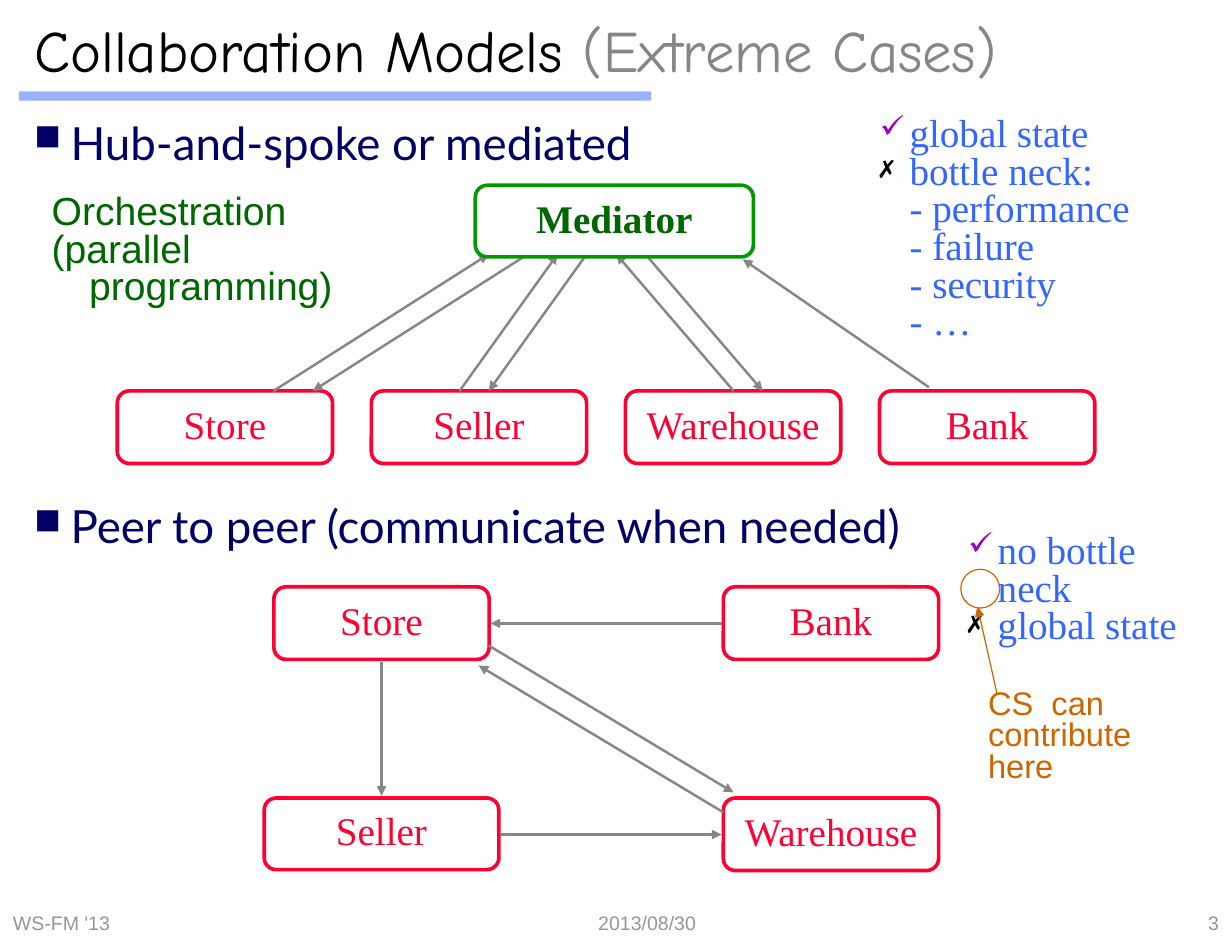
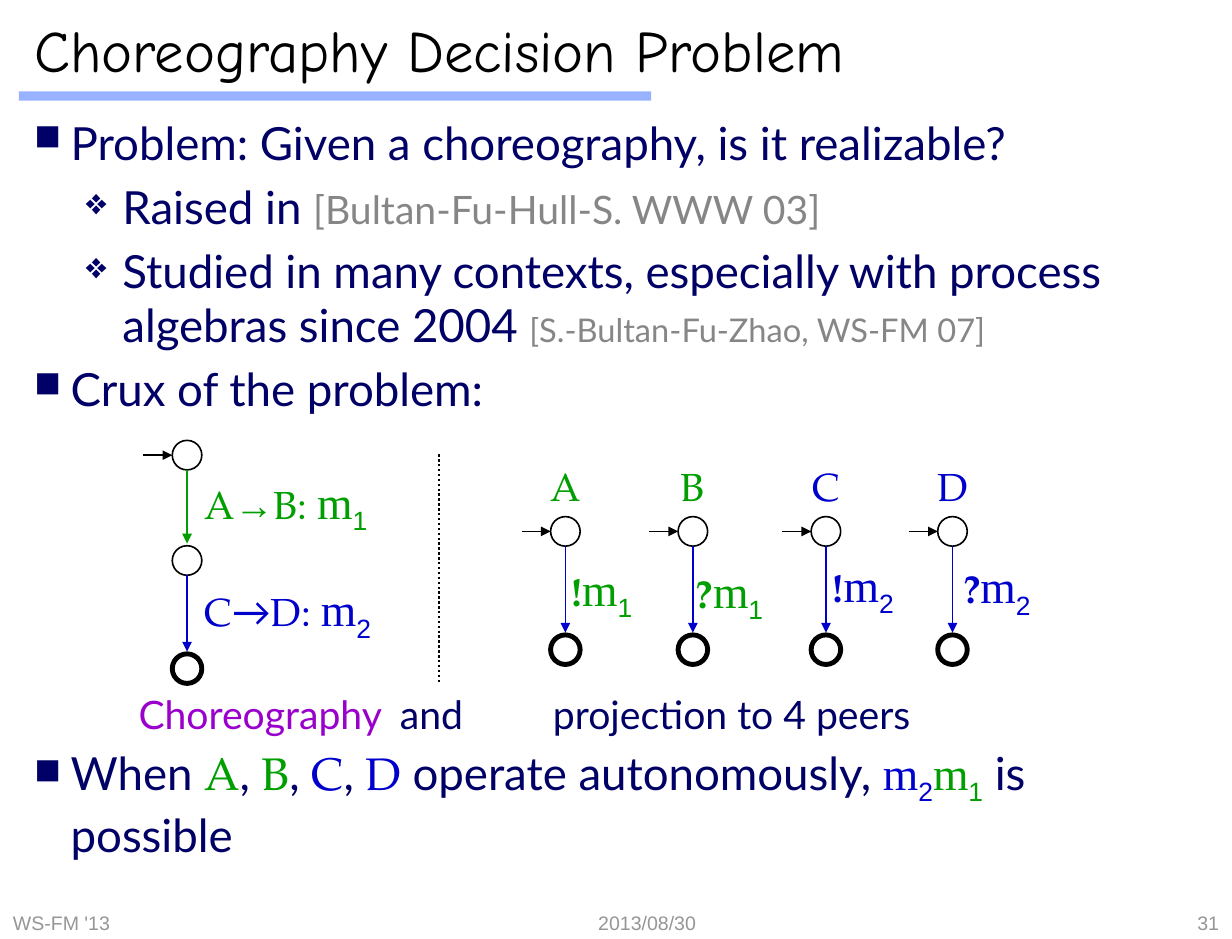
from lxml.etree import SubElement
from pptx import Presentation
from pptx.dml.color import RGBColor
from pptx.enum.dml import MSO_LINE
from pptx.enum.shapes import MSO_CONNECTOR, MSO_SHAPE
from pptx.enum.text import MSO_ANCHOR, MSO_AUTO_SIZE, PP_ALIGN
from pptx.oxml.ns import qn
from pptx.util import Cm, Pt

BLACK, WHITE, NAVY, GRAY = "000000", "FFFFFF", "000066", "868686"
BLUE, RED, PURPLE, ORANGE = "3366FF", "FF0033", "9900CC", "CC6600"
DARK_GREEN, GREEN, MID_BLUE = "006600", "009E00", "0000CC"
HEAD, BODY, SERIF, SANS, MATH = "Comic Neue", "Lato", "Times New Roman", "Arial", "TeX Gyre Pagella"
STATE = 0.64


def rgb(value):
    return RGBColor.from_string(value)


def add_text(p, text, size=24, font=BODY, color=NAVY, bold=False, base=0):
    for i, part in enumerate(text.split("\n")):
        if i:
            p.add_line_break()
        r = p.add_run()
        r.text = part
        r.font.size = Pt(size)
        r.font.name = font
        r.font.bold = bold
        r.font.color.rgb = rgb(color)
        if base:
            r._r.get_or_add_rPr().set("baseline", str(base * 1000))


def add_bullet(p, char, color):
    pPr = p._p.get_or_add_pPr()
    SubElement(SubElement(pPr, qn("a:buClr")), qn("a:srgbClr"), val=color)
    SubElement(pPr, qn("a:buSzPct"), val="80000")
    SubElement(pPr, qn("a:buChar"), char=char)


def add_tabs(p, stops):
    tabs = SubElement(p._p.get_or_add_pPr(), qn("a:tabLst"))
    for stop in stops:
        SubElement(tabs, qn("a:tab"), pos=str(Cm(stop)), algn="l")


def peer(name, color):
    return name, dict(font=MATH, color=color)


def message(number, color):
    return [("m", dict(size=28, font=SERIF, color=color)),
            (number, dict(size=28, font=SANS, color=color, base=-25))]


class Deck:
    def __init__(self):
        self.prs = Presentation()
        self.prs.slide_width, self.prs.slide_height = Cm(26.67), Cm(20.32)
        self.s = None

    def slide(self, number, *title):
        self.s = self.prs.slides.add_slide(self.prs.slide_layouts[5])
        self.band()
        footer = dict(size=12, font=SANS, color="969696")
        for x, w, text, align in ((11.23, 5.56, "2013/08/30", PP_ALIGN.CENTER),
                                  (0, 8.46, "WS-FM '13", PP_ALIGN.LEFT),
                                  (21.11, 5.56, number, PP_ALIGN.RIGHT)):
            self.text(x, 19.63, w, 0.69, [text], align=align, anchor=MSO_ANCHOR.MIDDLE, **footer)
        sp = self.s.shapes.title
        sp.left, sp.top, sp.width, sp.height = Cm(0.46), Cm(0), Cm(25.78), Cm(2.11)
        self.frame(sp, MSO_ANCHOR.MIDDLE)
        p = sp.text_frame.paragraphs[0]
        p.alignment = PP_ALIGN.LEFT
        for text, color in zip(title, (BLACK, GRAY)):
            add_text(p, text, size=36, font=HEAD, color=color)

    def frame(self, sp, anchor=MSO_ANCHOR.TOP, inset=0.28, wrap=True):
        tf = sp.text_frame
        tf.auto_size = MSO_AUTO_SIZE.NONE
        tf.word_wrap = wrap
        tf.vertical_anchor = anchor
        tf.margin_left = tf.margin_right = Cm(inset)
        tf.margin_top = tf.margin_bottom = Cm(inset / 2)
        return tf

    def band(self):
        sp = self.shape(MSO_SHAPE.RECTANGLE, 0.41, 1.98, 13.69, 0.2, fill=BLUE)
        color = sp.fill._xPr.find(qn("a:solidFill")).find(qn("a:srgbClr"))
        SubElement(color, qn("a:alpha"), val="50000")

    def shape(self, kind, x, y, w, h, fill=None, line=None, width=1):
        sp = self.s.shapes.add_shape(kind, Cm(x), Cm(y), Cm(w), Cm(h))
        sp.shadow.inherit = False
        if fill:
            sp.fill.solid()
            sp.fill.fore_color.rgb = rgb(fill)
        else:
            sp.fill.background()
        if line:
            sp.line.color.rgb = rgb(line)
            sp.line.width = Pt(width)
        else:
            sp.line.fill.background()
        return sp

    def node(self, name, x, y, w=4.66, h=1.57, line=RED, color=RED, fill=None, bold=False):
        sp = self.shape(MSO_SHAPE.ROUNDED_RECTANGLE, x, y, w, h, fill, line, 2.25)
        p = self.frame(sp, MSO_ANCHOR.MIDDLE, wrap=False).paragraphs[0]
        p.alignment = PP_ALIGN.CENTER
        p.line_spacing = 0.85
        add_text(p, name, font=SERIF, color=color, bold=bold)

    def line(self, x1, y1, x2, y2, color=GRAY, width=1.5, arrow=True, dash=None):
        c = self.s.shapes.add_connector(MSO_CONNECTOR.STRAIGHT, Cm(x1), Cm(y1), Cm(x2), Cm(y2))
        c.line.color.rgb = rgb(color)
        c.line.width = Pt(width)
        if dash:
            c.line.dash_style = dash
        spPr = c._element.spPr
        if arrow:
            SubElement(spPr.find(qn("a:ln")), qn("a:tailEnd"), type="triangle")
        SubElement(spPr, qn("a:effectLst"))

    def text(self, x, y, w, h, paras, align=PP_ALIGN.LEFT, anchor=MSO_ANCHOR.TOP, inset=0.28,
             spacing=None, before=0, hang=0, margins=(), bullets=(), tabs=(), **fmt):
        sp = self.s.shapes.add_textbox(Cm(x), Cm(y), Cm(w), Cm(h))
        tf = self.frame(sp, anchor, inset)
        for i, runs in enumerate(paras):
            p = tf.paragraphs[0] if i == 0 else tf.add_paragraph()
            p.alignment = align
            if spacing:
                p.line_spacing = spacing
            if before:
                p.space_before = Pt(before)
            if hang:
                pPr = p._p.get_or_add_pPr()
                pPr.set("marL", str(Cm(margins[i] if margins else hang)))
                pPr.set("indent", str(-Cm(hang)))
            if bullets:
                add_bullet(p, *bullets[i])
            if tabs:
                add_tabs(p, tabs)
            for text, own in [(runs, {})] if isinstance(runs, str) else runs:
                add_text(p, text, **{**fmt, **own})

    def points(self, y, h, *items):
        levels = [level for level, _ in items]
        self.text(0.46, y, 25.78, h, [runs for _, runs in items], before=5.6, hang=0.79,
                  margins=[(0.79, 1.91)[n] for n in levels],
                  bullets=[("■❖"[n], NAVY) for n in levels], size=28)

    def verdict(self, x, y, w, h, pro, con):
        self.text(x, y, w, h, [pro, con], spacing=0.8, hang=0.64,
                  bullets=[("✓", PURPLE), ("✗", BLACK)], font=SERIF, color=BLUE)

    def automaton(self, x, tops, colors):
        self.line(x - 0.95, tops[0] + STATE / 2, x - STATE / 2, tops[0] + STATE / 2, BLACK, 1)
        for top in tops:
            width = 3 if top == tops[-1] else 1
            self.shape(MSO_SHAPE.OVAL, x - STATE / 2, top, STATE, STATE, line=BLACK, width=width)
        for top, below, color in zip(tops, tops[1:], colors):
            self.line(x, top + STATE, x, below - 0.05, color, 1)


def collaboration_models(d):
    d.slide("3", "Collaboration Models ", "(Extreme Cases)")
    d.points(2.34, 1.6, (0, "Hub-and-spoke or mediated"))
    d.points(10.64, 1.6, (0, "Peer to peer (communicate when needed)"))

    row, hub = 8.46, 5.5
    for i, name in enumerate(("Store", "Seller", "Warehouse", "Bank")):
        d.node(name, 2.54 + 5.5 * i, row)
    for x1, x2 in ((5.92, 10.58), (9.95, 12.07), (15.88, 13.34)):
        d.line(x1, row, x2, hub)
    for x1, x2 in ((11.43, 6.77), (12.7, 10.58), (13.97, 16.51)):
        d.line(x1, hub, x2, row)
    d.line(20.11, 8.38, 16.08, 5.61)
    d.node("Mediator", 10.29, 4.01, 6.02, 1.55, line="009900", color=DARK_GREEN, fill=WHITE, bold=True)
    d.text(0.84, 4.09, 7, 2.72, ["Orchestration", "(parallel\nprogramming)"],
           spacing=0.8, hang=0.81, font=SANS, color=DARK_GREEN)
    d.verdict(18.77, 2.41, 6.6, 5.21, "global state",
              "bottle neck:\n- performance\n- failure\n- security\n- …")

    d.node("Store", 5.93, 12.7)
    d.node("Bank", 15.66, 12.7)
    d.node("Seller", 5.72, 17.27, 5.08, 1.55)
    d.node("Warehouse", 15.66, 17.27)
    for ends in ((15.66, 17.58, 10.36, 14.4), (10.58, 13.97, 15.88, 17.15),
                 (15.62, 13.49, 10.62, 13.49), (10.82, 18.06, 15.62, 18.06),
                 (8.26, 14.33, 8.26, 17.22)):
        d.line(*ends)
    d.verdict(20.68, 11.43, 5.99, 2.72, "no bottle\nneck", "global state")
    d.text(21.39, 14.94, 4.7, 1.95, ["CS  can\ncontribute\nhere"], inset=0,
           spacing=0.8, size=20, font=SANS, color=ORANGE)
    d.line(21.59, 15.04, 21.16, 13.13, ORANGE, 0.75)
    d.shape(MSO_SHAPE.OVAL, 20.8, 12.32, 0.84, 0.84, line=ORANGE, width=0.75)


def decision_problem(d):
    d.slide("31", "Choreography Decision Problem")
    d.points(2.34, 7,
             (0, "Problem: Given a choreography, is it realizable?"),
             (1, [("Raised in ", {}), ("[Bultan-Fu-Hull-S. WWW 03]", dict(size=24, color=GRAY))]),
             (1, [("Studied in many contexts, especially with process algebras since 2004 ", {}),
                  ("[S.-Bultan-Fu-Zhao, WS-FM 07]", dict(size=20, color=GRAY))]),
             (0, "Crux of the problem:"))
    peers = (("A", GREEN), ("B", GREEN), ("C", MID_BLUE), ("D", MID_BLUE))
    when = [("When ", {})]
    for i, (name, color) in enumerate(peers):
        if i:
            when.append((", ", {}))
        when.append((name, dict(font=MATH, color=color)))
    d.points(15.98, 1.6, (0, when + [(" operate autonomously, ", {})] + message("2", MID_BLUE)
                          + message("1", GREEN) + [(" is possible", {})]))

    d.automaton(4.05, (9.53, 11.81, 14.15), (GREEN, MID_BLUE))
    for y, sender, receiver, number, color, arrow_font in (
            (10.13, "A", "B: ", "1", GREEN, SANS), (12.45, "C", "D: ", "2", MID_BLUE, BODY)):
        arrow = ("→", dict(font=arrow_font, color=color))
        d.text(4.17, y, 4.67, 1.45, [[peer(sender, color), arrow, peer(receiver, color)]
                                     + message(number, color)], inset=0.25)
    d.line(9.5, 9.83, 9.5, 14.81, BLACK, arrow=False, dash=MSO_LINE.ROUND_DOT)

    columns = ((12.24, "!", "1", 12.09, 11.99), (15, "?", "1", 14.78, 12.04),
               (17.88, "!", "2", 17.75, 11.91), (20.62, "?", "2", 20.57, 11.94))
    for (name, color), (x, action, number, left, top) in zip(peers, columns):
        d.text(x - 0.8, 9.86, 1.6, 1.27, [[peer(name, color)]], align=PP_ALIGN.CENTER)
        d.automaton(x, (11.18, 13.74), (MID_BLUE,))
        d.text(left, top, 2.3, 1.45,
               [[(action, dict(font=MATH, color=color, bold=True))] + message(number, color)])
    d.text(2.72, 14.81, 17.81, 1.27,
           [[("Choreography\t", dict(color=PURPLE)), ("and\tprojection to 4 peers", {})]],
           tabs=(5.66, 8.97))


def main():
    d = Deck()
    collaboration_models(d)
    decision_problem(d)
    d.prs.save("out.pptx")


if __name__ == "__main__":
    main()
